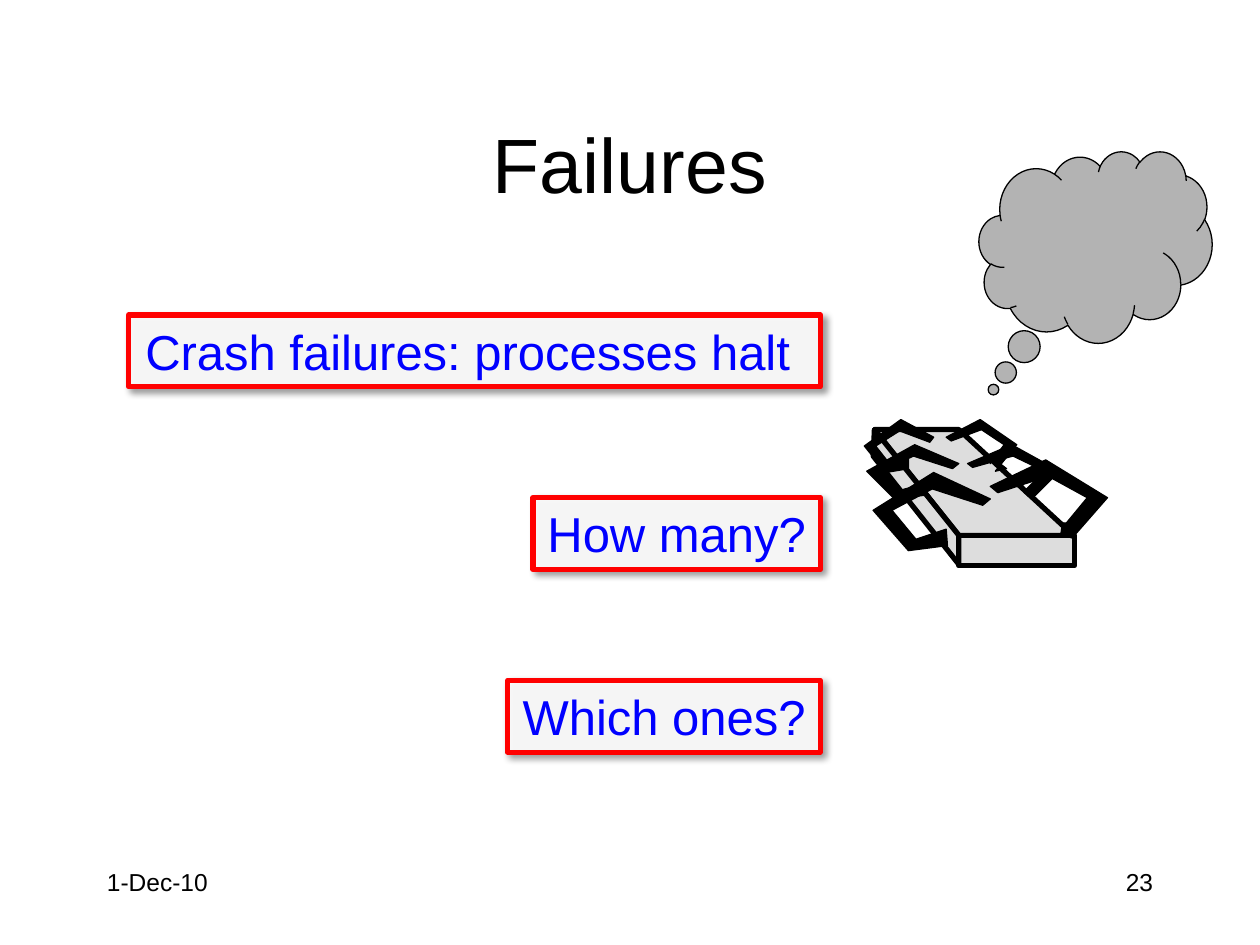
"""Build the slide on crash failures."""
from lxml import etree
from pptx import Presentation
from pptx.dml.color import RGBColor
from pptx.enum.shapes import MSO_SHAPE
from pptx.enum.text import MSO_ANCHOR, MSO_AUTO_SIZE, PP_ALIGN
from pptx.oxml.ns import qn
from pptx.util import Inches, Pt

RECTANGLE = MSO_SHAPE.RECTANGLE
CLOUD = MSO_SHAPE.CLOUD_CALLOUT
LEFT, CENTER, RIGHT = PP_ALIGN.LEFT, PP_ALIGN.CENTER, PP_ALIGN.RIGHT
TOP, MIDDLE = MSO_ANCHOR.TOP, MSO_ANCHOR.MIDDLE
FIT_SHAPE = MSO_AUTO_SIZE.SHAPE_TO_FIT_TEXT

FONT = "Arial"
BLACK, WHITE, RED, BLUE = "000000", "FFFFFF", "FF0000", "0000FF"
BODY_GRAY, CLOUD_GRAY = "DDDDDD", "B3B3B3"

BOX_RIGHT, BOX_TOP, BOX_STEP, BOX_HEIGHT = 6.51, 2.5, 1.45, 0.57
BOXES = [
    ("Crash failures: processes halt ", 5.49),
    ("How many?", 2.28),
    ("Which ones?", 2.48),
]

# Outlines in hundredths of an inch
BODY_TOP = [(694, 341), (761, 425), (852, 425), (761, 341)]
BODY_SIDE = [(694, 341), (693, 362), (761, 448), (761, 425)]
LEGS = [
    [(751, 420), (752, 433), (721, 437), (693, 405), (741, 375), (786, 396),
     (780, 401), (740, 388), (708, 405), (727, 428)],
    [(734, 384), (735, 393), (710, 396), (688, 374), (726, 353), (761, 368),
     (756, 372), (725, 362), (700, 374), (715, 389)],
    [(721, 363), (721, 372), (703, 375), (686, 354), (715, 333), (741, 347),
     (738, 351), (714, 342), (695, 354), (706, 368)],
    [(810, 383), (813, 391), (819, 396), (841, 374), (803, 353), (768, 368),
     (772, 371), (804, 362), (829, 374), (814, 389)],
    [(786, 362), (799, 372), (790, 374), (807, 353), (778, 333), (751, 347),
     (755, 350), (779, 341), (797, 353), (786, 368)],
    [(847, 420), (843, 418), (842, 424), (851, 427), (879, 395), (830, 365),
     (786, 386), (792, 391), (832, 378), (863, 395), (844, 418), (847, 415),
     (843, 415), (840, 415)],
]


def color(value):
    """Return the colour for a hex string."""
    return RGBColor.from_string(value)


def style_shape(shape, fill, line, width):
    """Set the fill and line of a shape and drop its shadow."""
    shape.shadow.inherit = False
    shape.fill.solid()
    shape.fill.fore_color.rgb = color(fill)
    shape.line.color.rgb = color(line)
    shape.line.width = Pt(width)


def set_alpha(color_element, percent):
    """Make a colour element partly transparent."""
    alpha = etree.SubElement(color_element, qn("a:alpha"))
    alpha.set("val", str(percent * 1000))


def add_shadow(shape):
    """Give a shape a soft shadow to the lower right."""
    effects = shape._element.spPr.find(qn("a:effectLst"))
    shadow = etree.SubElement(effects, qn("a:outerShdw"))
    shadow.set("blurRad", str(Pt(4)))
    shadow.set("dist", str(Pt(3)))
    shadow.set("dir", str(45 * 60000))
    shadow_color = etree.SubElement(shadow, qn("a:srgbClr"))
    shadow_color.set("val", BLACK)
    set_alpha(shadow_color, 40)


def write_text(shape, text, size, text_color, alignment, anchor):
    """Write one paragraph into a shape."""
    frame = shape.text_frame
    frame.vertical_anchor = anchor
    paragraph = frame.paragraphs[0]
    paragraph.alignment = alignment
    run = paragraph.add_run()
    run.text = text
    run.font.name = FONT
    run.font.size = Pt(size)
    run.font.color.rgb = color(text_color)


def add_title(slide, text):
    """Place and fill the title placeholder."""
    title = slide.shapes.title
    title.left, title.top = Inches(0.75), Inches(0.67)
    title.width, title.height = Inches(8.5), Inches(1.25)
    write_text(title, text, 44, BLACK, CENTER, MIDDLE)


def add_footer(slide, text, left, alignment):
    """Add a small text at the foot of the slide."""
    box = slide.shapes.add_textbox(
        Inches(left), Inches(6.83), Inches(2.08), Inches(0.5))
    box.text_frame.word_wrap = True
    write_text(box, text, 14, BLACK, alignment, TOP)


def add_outline(shapes, points, fill, width):
    """Add a closed polygon."""
    builder = shapes.build_freeform(*points[0], scale=Inches(0.01))
    builder.add_line_segments(points[1:], close=True)
    style_shape(builder.convert_to_shape(), fill, BLACK, width)


def add_crashed_process(slide):
    """Add the grouped drawing of a box with six legs."""
    shapes = slide.shapes.add_group_shape().shapes
    add_outline(shapes, BODY_TOP, BODY_GRAY, 3)
    front = shapes.add_shape(
        RECTANGLE, Inches(7.61), Inches(4.25), Inches(0.92), Inches(0.24))
    style_shape(front, BODY_GRAY, BLACK, 3)
    add_outline(shapes, BODY_SIDE, BODY_GRAY, 3)
    for leg in LEGS:
        add_outline(shapes, leg, BLACK, 0.75)


def add_thought(slide):
    """Add the empty thought cloud."""
    cloud = slide.shapes.add_shape(
        CLOUD, Inches(7.77), Inches(1.2), Inches(1.85), Inches(1.52))
    cloud.adjustments[0] = -0.438
    cloud.adjustments[1] = 0.745
    style_shape(cloud, CLOUD_GRAY, BLACK, 0.75)


def add_box(slide, text, top, width):
    """Add a red-framed box that ends at the common right edge."""
    box = slide.shapes.add_shape(
        RECTANGLE, Inches(BOX_RIGHT - width), Inches(top),
        Inches(width), Inches(BOX_HEIGHT))
    style_shape(box, WHITE, RED, 3)
    fill = box._element.spPr.find(qn("a:solidFill"))
    set_alpha(fill[0], 90)
    add_shadow(box)
    box.text_frame.word_wrap = False
    box.text_frame.auto_size = FIT_SHAPE
    write_text(box, text, 28, BLUE, CENTER, TOP)


def main():
    """Build and save the presentation."""
    presentation = Presentation()
    presentation.slide_width = Inches(10)
    presentation.slide_height = Inches(7.5)
    slide = presentation.slides.add_slide(presentation.slide_layouts[5])
    add_title(slide, "Failures")
    add_footer(slide, "1-Dec-10", 0.75, LEFT)
    add_footer(slide, "23", 7.17, RIGHT)
    add_crashed_process(slide)
    add_thought(slide)
    for index, (text, width) in enumerate(BOXES):
        add_box(slide, text, BOX_TOP + index * BOX_STEP, width)
    presentation.save("out.pptx")


if __name__ == "__main__":
    main()
